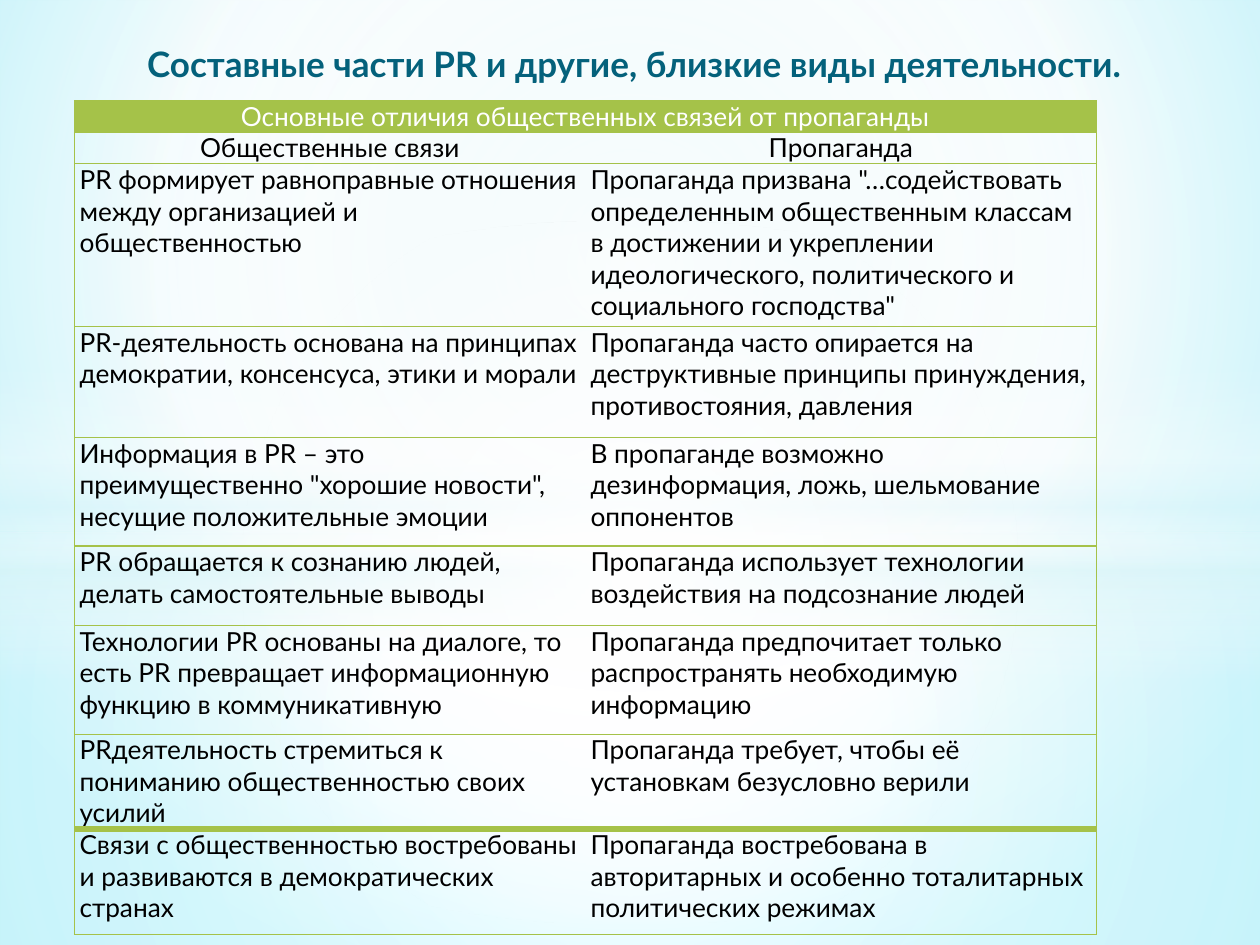
from pptx import Presentation
from pptx import util as u
from pptx.dml.color import RGBColor
from pptx.enum import shapes, text
from pptx.oxml.ns import qn
from lxml import etree

HEX = {"green": "A5C249", "title": "04617B", "white": "FFFFFF", "black": "000000",
       "pale": "DBF5F9", "ice": "CAF0F6", "cyan": "79EDFF"}
MID = (50, 50, 50, 50)
NO_GRID = "{2D5ABB26-0587-4C30-8999-92F81FD0307C}"
HEAD = "Основные отличия общественных связей от пропаганды"
ROWS = [
    (18, "Общественные связи", "Пропаганда"),
    (93, "PR формирует равноправные отношения между организацией и общественностью",
     "Пропаганда призвана \"…содействовать определенным общественным классам в достижении "
     "и укреплении идеологического, политического и социального господства\""),
    (63.5, "PR-деятельность основана на принципах демократии, консенсуса, этики и морали",
     "Пропаганда часто опирается на деструктивные принципы принуждения, "
     "противостояния, давления"),
    (62, "Информация в PR – это преимущественно \"хорошие новости\", "
     "несущие положительные эмоции",
     "В пропаганде возможно дезинформация, ложь, шельмование оппонентов"),
    (45.5, "PR обращается к сознанию людей, делать самостоятельные выводы",
     "Пропаганда использует технологии воздействия на подсознание людей"),
    (62, "Технологии PR основаны на диалоге, то есть PR превращает "
     "информационную функцию в коммуникативную",
     "Пропаганда предпочитает только распространять необходимую информацию"),
    (54, "PRдеятельность стремиться к пониманию общественностью своих усилий",
     "Пропаганда требует, чтобы её установкам безусловно верили"),
    (60.5, "Связи с общественностью востребованы и развиваются "
     "в демократических странах",
     "Пропаганда востребована в авторитарных и особенно тоталитарных "
     "политических режимах"),
]


def node(top, tag, **attrs):
    return etree.SubElement(top, qn("a:" + tag), {k: str(v) for k, v in attrs.items()})


class Deck:
    def __init__(self, font="Lato"):
        self.prs = Presentation()
        self.prs.slide_width, self.prs.slide_height = u.Pt(720), u.Pt(540)
        self.slide = self.prs.slides.add_slide(self.prs.slide_layouts[6])
        self.font = font

    def blend(self, fill, top, stops, rect=None):
        """Set a gradient of (place, colour, opacity); circular if rect is given."""
        fill.gradient()
        grad = top.find(".//" + qn("a:gradFill"))
        for kid in list(grad):
            grad.remove(kid)
        gs = node(grad, "gsLst")
        for pos, name, alpha in stops:
            tint = node(node(gs, "gs", pos=pos * 1000), "srgbClr", val=HEX[name])
            if alpha < 100:
                node(tint, "alpha", val=alpha * 1000)
        if rect:
            sides = {k: v * 1000 for k, v in zip("ltrb", rect)}
            node(node(grad, "path", path="circle"), "fillToRect", **sides)
        else:
            node(grad, "lin", ang=90 * 60000, scaled=0)

    def back(self, stops, rect):
        self.blend(self.slide.background.fill, self.slide.element, stops, rect)

    def glow(self, kind, y, h, stops, rect=None):
        item = self.slide.shapes.add_shape(kind, 0, u.Pt(y), u.Pt(720), u.Pt(h))
        item.shadow.inherit = False
        item.line.fill.background()
        self.blend(item.fill, item.element.spPr, stops, rect)

    def label(self, para, words, size, tone, align, bold=False):
        para.text, para.alignment = words, align
        font = para.font
        font.name, font.size, font.bold = self.font, u.Pt(size), bold
        font.color.rgb = RGBColor.from_string(HEX[tone])

    def title(self, words, x, y, w, h):
        frame = self.slide.shapes.add_textbox(u.Pt(x), u.Pt(y), u.Pt(w), u.Pt(h)).text_frame
        frame.word_wrap = True
        para = frame.paragraphs[0]
        self.label(para, words, 20, "title", text.PP_ALIGN.CENTER, True)
        para.space_before, para.space_after = u.Pt(4), u.Pt(3)

    def edge(self, cell, **sides):
        """Draw cell borders; each side is given its width."""
        props = cell._tc.get_or_add_tcPr()
        for i, (side, width) in enumerate(sides.items()):
            line = etree.Element(qn("a:ln" + side), w=str(u.Pt(width)))
            node(node(line, "solidFill"), "srgbClr", val=HEX["green"])
            props.insert(i, line)

    def cell(self, cell, words, tone, align):
        cell.margin_left = cell.margin_right = u.Pt(3)
        cell.margin_top = cell.margin_bottom = 0
        cell.fill.background()
        self.label(cell.text_frame.paragraphs[0], words, 15, tone, align)

    def table(self, x, y, w, head, rows):
        high = [18] + [row[0] for row in rows]
        grid = self.slide.shapes.add_table(len(high), 2, u.Pt(x), u.Pt(y),
                                           u.Pt(w), u.Pt(sum(high))).table
        grid.first_row = grid.horz_banding = False
        grid._tbl.tblPr.find(qn("a:tableStyleId")).text = NO_GRID
        for row, h in zip(grid.rows, high):
            row.height = u.Pt(h)
        top = grid.cell(0, 0)
        top.merge(grid.cell(0, 1))
        self.cell(top, head, "white", text.PP_ALIGN.CENTER)
        top.fill.solid()
        top.fill.fore_color.rgb = RGBColor.from_string(HEX["green"])
        self.edge(top, L=0.75, R=0.75, T=0.75, B=0.75)
        for r, (_, *pair) in enumerate(rows, 1):
            align = text.PP_ALIGN.CENTER if r == 1 else text.PP_ALIGN.LEFT
            for c, words in enumerate(pair):
                box = grid.cell(r, c)
                self.cell(box, words, "black", align)
                over = 4 if r == len(rows) else 0.75
                under = 4 if r == len(rows) - 1 else 0.75
                self.edge(box, **{"LR"[c]: 0.75}, T=over, B=under)


def main():
    deck = Deck()
    rect, oval = shapes.MSO_SHAPE.RECTANGLE, shapes.MSO_SHAPE.OVAL
    deck.back([(0, "ice", 100), (60, "white", 100), (100, "cyan", 100)], (20, 10, 20, 60))
    deck.glow(rect, 304.5, 235.5, [(0, "white", 91), (37, "white", 76), (100, "pale", 79)], MID)
    deck.glow(rect, 0, 304.5, [(0, "white", 89), (48, "white", 62), (100, "pale", 79)], MID)
    deck.glow(rect, 209, 180, [(0, "white", 0), (29, "white", 30), (45, "pale", 40),
                               (55, "white", 26), (65, "pale", 60), (100, "white", 0)])
    deck.glow(oval, 126, 402, [(0, "white", 100), (54, "white", 0)], MID)
    deck.title("Составные части PR и другие, близкие виды деятельности.", 31, 21, 663, 272)
    deck.table(42.5, 57.5, 584, HEAD, ROWS)
    deck.prs.save("out.pptx")


if __name__ == "__main__":
    main()
